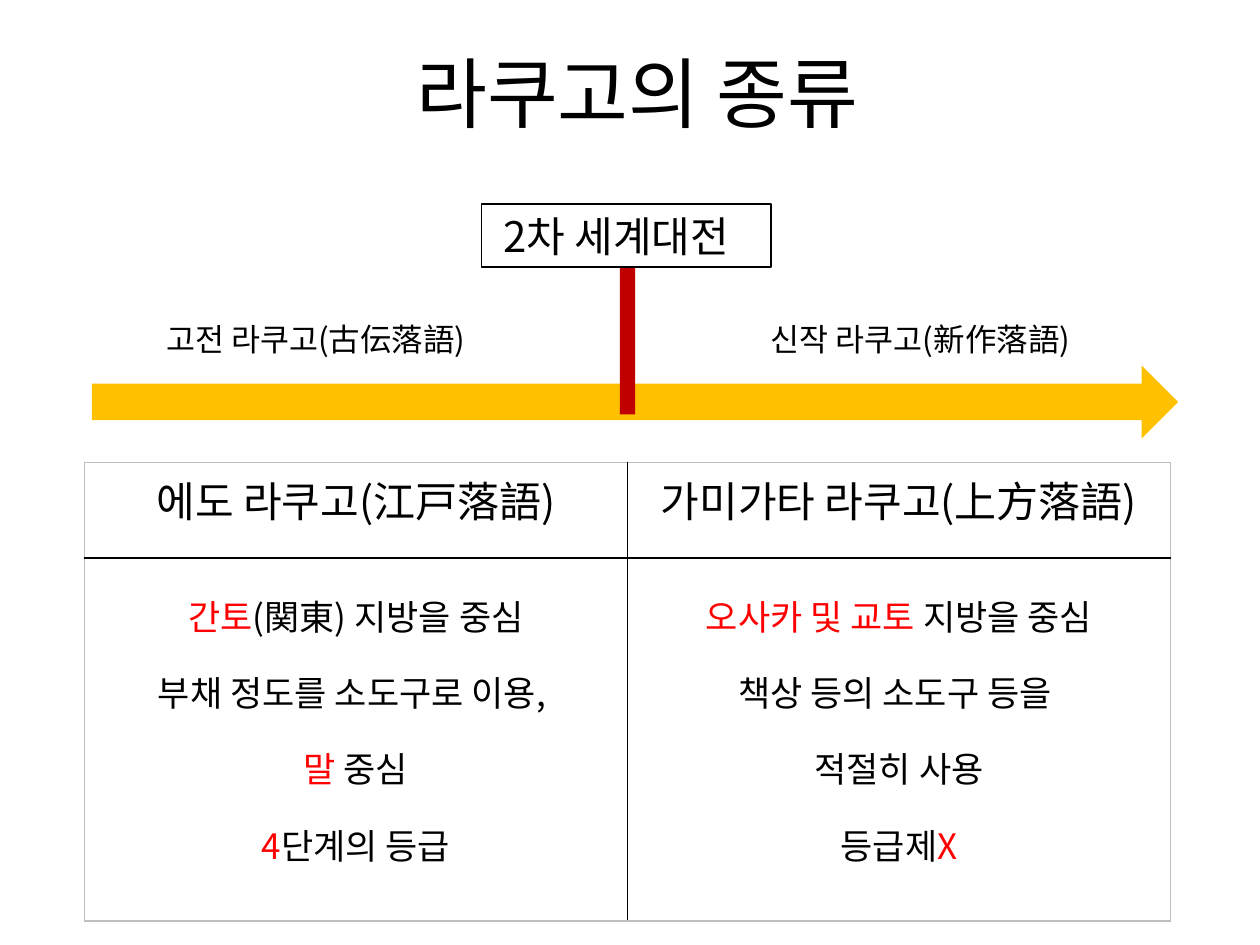
from lxml import etree
from pptx import Presentation
from pptx.dml.color import RGBColor
from pptx.enum.shapes import MSO_SHAPE
from pptx.enum.text import MSO_ANCHOR, MSO_AUTO_SIZE, PP_ALIGN
from pptx.oxml.ns import qn
from pptx.util import Inches, Pt

RECT, ARROW = MSO_SHAPE.RECTANGLE, MSO_SHAPE.RIGHT_ARROW
LEFT, CENTER = PP_ALIGN.LEFT, PP_ALIGN.CENTER
TOP, MIDDLE = MSO_ANCHOR.TOP, MSO_ANCHOR.MIDDLE
GROW, FIXED = MSO_AUTO_SIZE.SHAPE_TO_FIT_TEXT, MSO_AUTO_SIZE.NONE

COLS, ROWS = 100, 75
BLACK, WHITE, RED, GRAY = "000000", "FFFFFF", "FF0000", "BFBFBF"
AMBER, CRIMSON = "FFC000", "C00000"


def rgb(value):
    return RGBColor.from_string(value)


def set_all(obj, values):
    for name, value in values.items():
        setattr(obj, name, value)


class Deck:
    font = "Noto Sans CJK KR"

    def __init__(self):
        self.prs = Presentation()
        set_all(self.prs, {"slide_width": Inches(10), "slide_height": Inches(7.5)})
        self.s = self.prs.slides.add_slide(self.prs.slide_layouts[6])

    def x(self, cols):
        return round(self.prs.slide_width * cols / COLS)

    def y(self, rows):
        return round(self.prs.slide_height * rows / ROWS)

    def box(self, left, top, width, height):
        return self.x(left), self.y(top), self.x(width), self.y(height)

    def add_lines(self, tf, lines, size, align=LEFT, spacing=None):
        for i, line in enumerate(lines):
            p = tf.add_paragraph() if i else tf.paragraphs[0]
            set_all(p, {"alignment": align, "line_spacing": spacing})
            for text, color in line:
                r = p.add_run()
                r.text = text
                set_all(r.font, {"size": Pt(size), "name": self.font})
                r.font.color.rgb = rgb(color)
                ea = etree.SubElement(r.font._element, qn("a:ea"))
                ea.set("typeface", self.font)

    def text(self, at, text, size, align=LEFT, anchor=TOP, fit=GROW):
        sp = self.s.shapes.add_textbox(*self.box(*at))
        set_all(sp.text_frame, {"word_wrap": True, "auto_size": fit, "vertical_anchor": anchor})
        self.add_lines(sp.text_frame, [[(text, BLACK)]], size, align)

    def shape(self, kind, at, fill, line=None, text=None, size=24):
        sp = self.s.shapes.add_shape(kind, *self.box(*at))
        sp.shadow.inherit = False
        sp.fill.solid()
        sp.fill.fore_color.rgb = rgb(fill)
        if line:
            sp.line.color.rgb = rgb(line)
            sp.line.width = Pt(0.75)
        else:
            sp.line.fill.background()
        if text:
            set_all(sp.text_frame, {"word_wrap": True, "auto_size": GROW, "vertical_anchor": TOP})
            self.add_lines(sp.text_frame, [[(text, BLACK)]], size)

    def borders(self, cell, colors):
        tc_pr = cell._tc.get_or_add_tcPr()
        for i, (side, color) in enumerate(zip("LRTB", colors)):
            ln = etree.Element(qn(f"a:ln{side}"), w=str(Pt(1)))
            fill = etree.SubElement(ln, qn("a:solidFill"))
            etree.SubElement(fill, qn("a:srgbClr"), val=color)
            tc_pr.insert(i, ln)

    def table(self, at, heights, rows, styles):
        n_rows, n_cols = len(rows), len(rows[0])
        tbl = self.s.shapes.add_table(n_rows, n_cols, *self.box(*at)).table
        set_all(tbl, {"first_row": False, "horz_banding": False})
        for i, (height, row, style) in enumerate(zip(heights, rows, styles)):
            tbl.rows[i].height = self.y(height)
            for j, lines in enumerate(row):
                cell = tbl.cell(i, j)
                cell.fill.solid()
                cell.fill.fore_color.rgb = rgb(WHITE)
                set_all(cell, {"margin_left": Inches(0.07), "margin_right": Inches(0.07)})
                edges = (j == 0, j == n_cols - 1, i == 0, i == n_rows - 1)
                self.borders(cell, [GRAY if edge else BLACK for edge in edges])
                self.add_lines(cell.text_frame, lines, align=CENTER, **style)


def main():
    deck = Deck()
    deck.text((7.5, 0, 86.2, 14.5), "라쿠고의 종류", 44, CENTER, MIDDLE, FIXED)
    header = [[[("에도 라쿠고(江戸落語)", BLACK)]], [[("가미가타 라쿠고(上方落語)", BLACK)]]]
    edo = [
        [("간토", RED), ("(関東) 지방을 중심", BLACK)],
        [("부채 정도를 소도구로 이용, ", BLACK)],
        [("말", RED), (" 중심", BLACK)],
        [("4", RED), ("단계의 등급", BLACK)],
    ]
    kamigata = [
        [("오사카 및 교토 ", RED), ("지방을 중심", BLACK)],
        [("책상 등의 소도구 등을 ", BLACK)],
        [("적절히 사용", BLACK)],
        [("등급제", BLACK), ("X", RED)],
    ]
    deck.table((6.7, 36.7, 86.2, 36.4), (7.6, 28.8), (header, (edo, kamigata)),
               ({"size": 24}, {"size": 20, "spacing": 1.5}))
    deck.shape(ARROW, (7.3, 29, 86.2, 5.8), AMBER)
    deck.shape(RECT, (49.2, 16.2, 1.2, 16.7), CRIMSON)
    deck.text((12.2, 24.9, 29.3, 4), "고전 라쿠고(古伝落語)", 18)
    deck.text((60.2, 24.9, 26.2, 4), "신작 라쿠고(新作落語)", 18)
    deck.shape(RECT, (38.2, 16.2, 23, 5), WHITE, BLACK, " 2차 세계대전")
    deck.prs.save("out.pptx")


if __name__ == "__main__":
    main()
